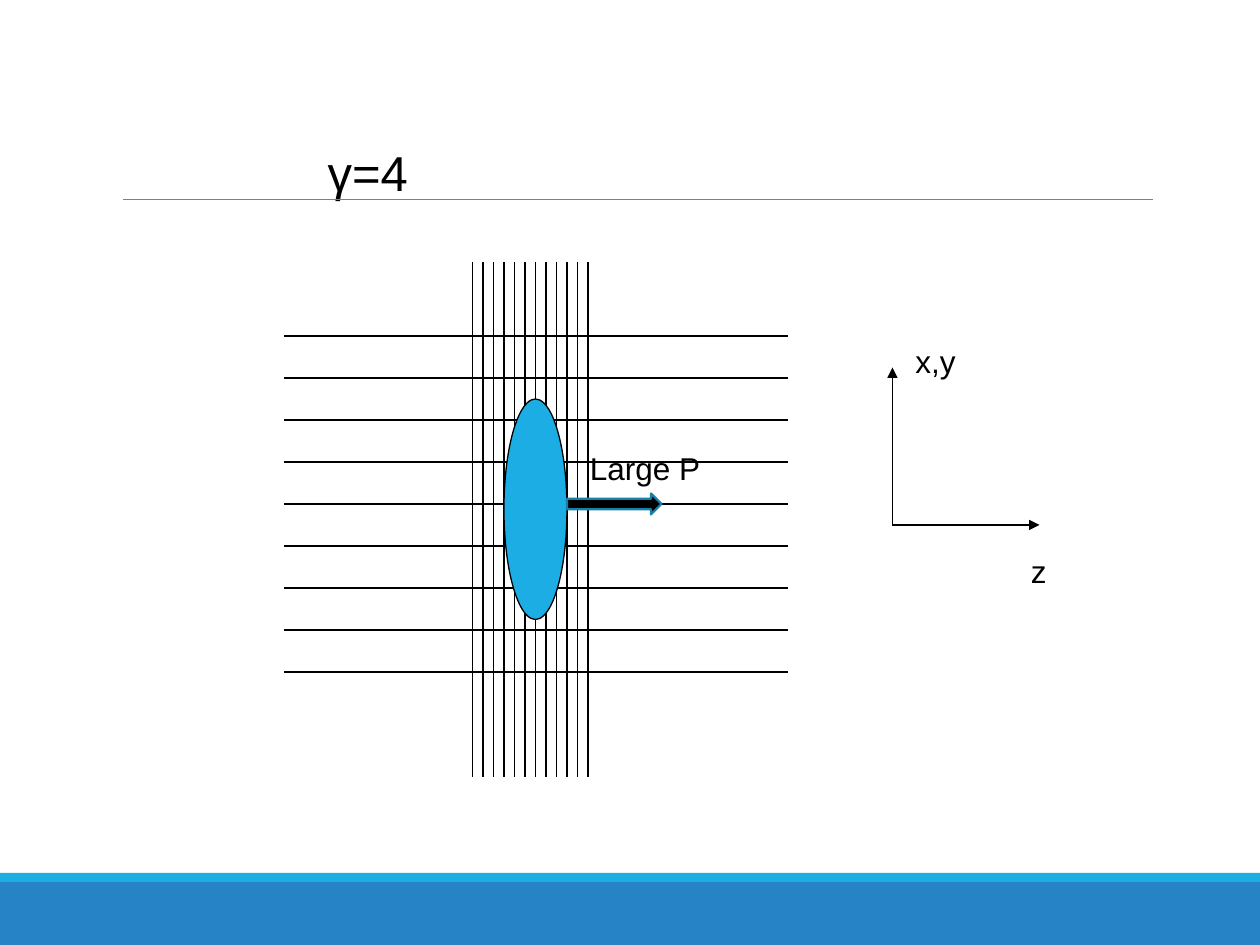
"""Build a slide showing the contracted field lines of a fast-moving charge."""
from dataclasses import dataclass

import pptx
import pptx.dml.color
import pptx.enum.shapes
import pptx.enum.text
import pptx.oxml
import pptx.oxml.ns
import pptx.util
from pptx.dml.color import RGBColor
from pptx.enum.shapes import MSO_SHAPE
from pptx.util import Pt

BLACK = RGBColor(0x00, 0x00, 0x00)
GREY = RGBColor(0x80, 0x80, 0x80)
SKY = RGBColor(0x1C, 0xAD, 0xE4)
BLUE = RGBColor(0x26, 0x83, 0xC6)
TEAL = RGBColor(0x15, 0x80, 0xA9)


@dataclass(frozen=True)
class Line:
    x1: float
    y1: float
    x2: float
    y2: float
    color: RGBColor = BLACK
    weight: float = 0.75
    arrow: bool = False


@dataclass(frozen=True)
class Block:
    kind: MSO_SHAPE
    left: float
    top: float
    width: float
    height: float
    fill: RGBColor
    outline: RGBColor | None = None
    weight: float = 0.75


@dataclass(frozen=True)
class Label:
    text: str
    left: float
    top: float
    width: float
    height: float
    size: float = 18
    wrap: bool = False


BANDS = [
    Block(MSO_SHAPE.RECTANGLE, 0, 504, 720, 36, BLUE),
    Block(MSO_SHAPE.RECTANGLE, 0, 498.75, 720, 5.25, SKY),
]
TITLE_RULE = Line(70.5, 113.75, 659, 113.75, GREY, 0.5)
AXES = [
    Line(510, 300, 594, 300, arrow=True),
    Line(510, 300, 510, 210, arrow=True),
]
TRANSVERSE_FIELD = [Line(270 + 6 * i, 150, 270 + 6 * i, 444) for i in range(12)]
LONGITUDINAL_FIELD = [Line(162, 192 + 24 * i, 450, 192 + 24 * i) for i in range(9)]
PARTICLE = [
    Block(MSO_SHAPE.OVAL, 288, 228, 36, 126, SKY, BLACK),
    Block(MSO_SHAPE.RIGHT_ARROW, 324, 282, 54, 12, BLACK, TEAL, 1.25),
]
TITLE = Label("γ=4", 180, 78, 61, 41, 28)
LABELS = [
    Label("z", 582, 312, 23.5, 29),
    Label("x,y", 516, 192, 37.5, 51),
    Label("Large P", 330, 253, 96, 29, wrap=True),
]


def draw_line(page: pptx.slide.Slide, line: Line) -> None:
    connector = page.shapes.add_connector(
        pptx.enum.shapes.MSO_CONNECTOR.STRAIGHT,
        Pt(line.x1), Pt(line.y1), Pt(line.x2), Pt(line.y2),
    )
    connector.line.color.rgb = line.color
    connector.line.width = Pt(line.weight)
    if line.arrow:
        tail = pptx.oxml.parse_xml(
            f'<a:tailEnd {pptx.oxml.ns.nsdecls("a")} type="triangle"/>'
        )
        connector.line._get_or_add_ln().append(tail)
    effects = pptx.oxml.parse_xml(f'<a:effectLst {pptx.oxml.ns.nsdecls("a")}/>')
    connector._element.spPr.append(effects)


def draw_block(page: pptx.slide.Slide, block: Block) -> None:
    shape = page.shapes.add_shape(
        block.kind, Pt(block.left), Pt(block.top), Pt(block.width), Pt(block.height)
    )
    shape.shadow.inherit = False
    shape.fill.solid()
    shape.fill.fore_color.rgb = block.fill
    if block.outline is None:
        shape.line.fill.background()
    else:
        shape.line.color.rgb = block.outline
        shape.line.width = Pt(block.weight)


def write_label(box: pptx.shapes.base.BaseShape, label: Label) -> None:
    box.left, box.top = Pt(label.left), Pt(label.top)
    box.width, box.height = Pt(label.width), Pt(label.height)
    frame = box.text_frame
    frame.text = label.text
    frame.word_wrap = label.wrap
    frame.auto_size = pptx.enum.text.MSO_AUTO_SIZE.SHAPE_TO_FIT_TEXT
    frame.vertical_anchor = pptx.enum.text.MSO_ANCHOR.TOP
    para = frame.paragraphs[0]
    para.alignment = pptx.enum.text.PP_ALIGN.LEFT
    para.font.name = "Arial"
    para.font.size = Pt(label.size)
    para.font.color.rgb = BLACK


def main() -> None:
    deck = pptx.Presentation()
    deck.slide_width, deck.slide_height = Pt(720), Pt(540)
    page = deck.slides.add_slide(deck.slide_layouts[5])
    write_label(page.shapes.title, TITLE)
    for band in BANDS:
        draw_block(page, band)
    for line in [TITLE_RULE, *AXES, *TRANSVERSE_FIELD, *LONGITUDINAL_FIELD]:
        draw_line(page, line)
    for block in PARTICLE:
        draw_block(page, block)
    for label in LABELS:
        box = page.shapes.add_textbox(0, 0, 0, 0)
        write_label(box, label)
    deck.save("out.pptx")


if __name__ == "__main__":
    main()
